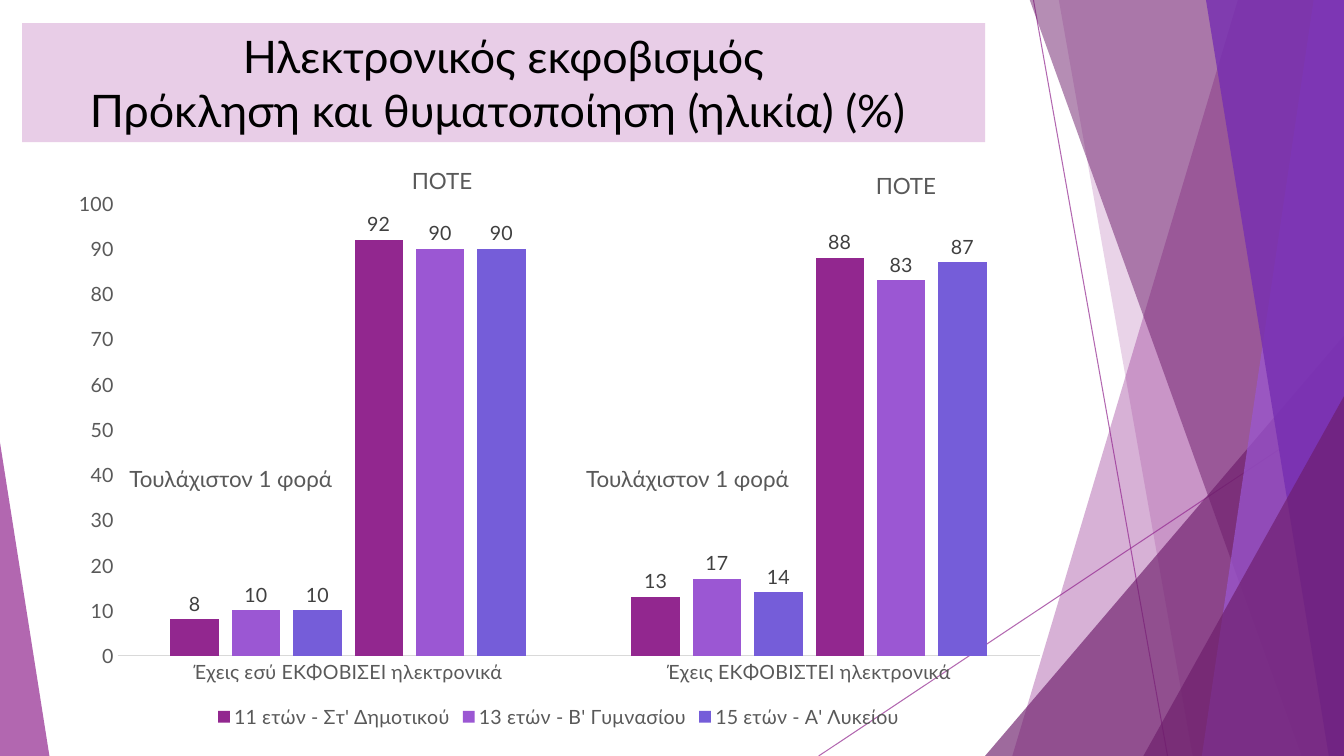
from lxml import etree
from pptx import Presentation
from pptx import util as u
from pptx.chart.data import CategoryChartData
from pptx.dml.color import RGBColor
from pptx.enum import chart as ch, shapes, text
from pptx.oxml import parse_xml
from pptx.oxml.ns import nsdecls, qn

PX = 9144  # 100 px to the inch
WIDE, HIGH = 1333, 750
FONT = "Lato"
PLUM = RGBColor(0x92, 0x27, 0x8F)
DARK = RGBColor(0x6D, 0x1D, 0x6B)
LILAC = RGBColor(0x9B, 0x57, 0xD3)
GRAPE = RGBColor(0x76, 0x2E, 0xB1)
BLUE = RGBColor(0x75, 0x5D, 0xD9)
PINK = RGBColor(0xE8, 0xCD, 0xE7)
BLACK = RGBColor(0, 0, 0)
GREY = RGBColor(0x59, 0x59, 0x59)
INK = RGBColor(0x40, 0x40, 0x40)
RULE = RGBColor(0xD9, 0xD9, 0xD9)


def px(*nums):
    return [u.Emu(n * PX) for n in nums]


def fade(item, pct):
    """Set the opacity of the first colour in a shape's properties."""
    tone = next(item._element.spPr.iter(qn("a:srgbClr")))
    etree.SubElement(tone, qn("a:alpha")).set("val", str(pct * 1000))


def paint(shape, color, pct=100):
    shape.shadow.inherit = False
    shape.fill.solid()
    shape.fill.fore_color.rgb = color
    shape.line.fill.background()
    if pct < 100:
        fade(shape, pct)


def ray(slide, x1, y1, x2, y2):
    line = slide.shapes.add_connector(
        shapes.MSO_CONNECTOR.STRAIGHT, *px(x1, y1, x2, y2))
    line.line.color.rgb = PLUM
    line.line.width = u.Pt(0.75)
    fade(line, 70)
    etree.SubElement(line._element.spPr, qn("a:effectLst"))


def band(slide, top, base, color, pct):
    """Draw a strip from a slanted left edge to the slide's right edge."""
    form = slide.shapes.build_freeform(top, -1, scale=PX)
    form.add_line_segments([(WIDE, -1), (WIDE, HIGH), (base, HIGH)], close=True)
    paint(form.convert_to_shape(), color, pct)


def wedge(slide, x, y, w, peak, color, pct):
    """Draw a right triangle that stands on the slide's lower edge."""
    shape = slide.shapes.add_shape(
        shapes.MSO_SHAPE.ISOSCELES_TRIANGLE, *px(x, y, w, HIGH - y))
    shape.adjustments[0] = peak
    paint(shape, color, pct)


def write(shape, lines, size, color):
    frame = shape.text_frame
    frame.word_wrap = True
    for i, line in enumerate(lines):
        para = frame.add_paragraph() if i else frame.paragraphs[0]
        para.alignment = text.PP_ALIGN.CENTER
        run = para.add_run()
        run.text = line
        style(run.font, size, color)


def style(font, size, color):
    font.name = FONT
    font.size = u.Pt(size)
    font.color.rgb = color


def title(slide, lines):
    shape = slide.shapes.add_shape(
        shapes.MSO_SHAPE.RECTANGLE, *px(22, 23, 955, 118))
    paint(shape, PINK)
    shape.text_frame.vertical_anchor = text.MSO_ANCHOR.MIDDLE
    write(shape, lines, 32, BLACK)


def note(slide, x, y, w, line):
    write(slide.shapes.add_textbox(*px(x, y, w, 37)), [line], 16, GREY)


def axes(chart):
    for axis in (chart.category_axis, chart.value_axis):
        axis.has_major_gridlines = False
        axis.major_tick_mark = axis.minor_tick_mark = ch.XL_TICK_MARK.NONE
        style(axis.tick_labels.font, 14, GREY)
    chart.category_axis.format.line.color.rgb = RULE
    chart.category_axis.format.line.width = u.Pt(0.75)
    scale = chart.value_axis
    scale.format.line.fill.background()
    scale.minimum_scale, scale.maximum_scale, scale.major_unit = 0, 100, 10


def legend(chart, hidden):
    chart.has_legend = True
    key = chart.legend
    key.position = ch.XL_LEGEND_POSITION.BOTTOM
    key.include_in_layout = False
    style(key.font, 14, GREY)
    for spot, idx in enumerate(hidden, 1):
        key._element.insert(spot, parse_xml(
            f'<c:legendEntry {nsdecls("c")}><c:idx val="{idx}"/>'
            '<c:delete val="1"/></c:legendEntry>'))


def place(chart, **parts):
    """Fix the inner plot area as fractions of the chart."""
    area = chart._chartSpace.chart.plotArea
    for old in area.findall(qn("c:layout")):
        area.remove(old)
    sizes = "".join(f'<c:{k} val="{v}"/>' for k, v in parts.items())
    area.insert(0, parse_xml(
        f'<c:layout {nsdecls("c")}><c:manualLayout>'
        '<c:layoutTarget val="inner"/><c:xMode val="edge"/>'
        f'<c:yMode val="edge"/>{sizes}</c:manualLayout></c:layout>'))


def bars(slide, cats, rows):
    data = CategoryChartData()
    data.categories = cats
    for name, vals in rows:
        data.add_series(name, vals)
    chart = slide.shapes.add_chart(
        ch.XL_CHART_TYPE.COLUMN_CLUSTERED, *px(57, 180, 994, 547), data).chart
    chart.has_title = False
    style(chart.font, 10, BLACK)
    plot = chart.plots[0]
    plot.vary_by_categories = False
    plot.gap_width, plot.overlap = 219, -27
    hues = (PLUM, LILAC, BLUE)
    for i, row in enumerate(plot.series):
        row.format.fill.solid()
        row.format.fill.fore_color.rgb = hues[i % 3]
        tags = row.data_labels
        tags.show_value = True
        tags.number_format = "#,##0"
        tags.number_format_is_linked = False
        tags.position = ch.XL_LABEL_POSITION.OUTSIDE_END
        style(tags.font, 14, INK)
    axes(chart)
    legend(chart, (3, 4, 5))
    place(chart, x=0.06, y=0.04, w=0.92, h=0.82)


def main():
    deck = Presentation()
    deck.slide_width, deck.slide_height = px(WIDE, HIGH)
    slide = deck.slides.add_slide(deck.slide_layouts[6])

    # Backdrop of rays and facets
    ray(slide, 1025, 0, 1158, 750)
    ray(slide, 1333, 403, 812, 750)
    band(slide, 1228, 1004, PLUM, 36)
    band(slide, 1050, 1183, PLUM, 20)
    wedge(slide, 977, 333, 356, 1, DARK, 66)
    band(slide, 1021, 1291, DARK, 50)
    band(slide, 1303, 1192, LILAC, 70)
    band(slide, 1196, 1318, GRAPE, 80)
    wedge(slide, 1134, 393, 199, 1, DARK, 66)
    wedge(slide, 0, 439, 49, 0, PLUM, 70)

    # Title
    title(slide, ["Ηλεκτρονικός εκφοβισμός",
                  "Πρόκληση και θυματοποίηση (ηλικία) (%) "])

    # Chart: at least once, then never, for each age
    bars(slide,
         ["Έχεις εσύ ΕΚΦΟΒΙΣΕΙ ηλεκτρονικά", "Έχεις ΕΚΦΟΒΙΣΤΕΙ ηλεκτρονικά"],
         [("11 ετών - Στ' Δημοτικού", (8, 13)),
          ("13 ετών - Β' Γυμνασίου", (10, 17)),
          ("15 ετών - Α' Λυκείου", (10, 14)),
          ("Series 4", (92, 88)),
          ("Series 5", (90, 83)),
          ("Series 6", (90, 87))])

    # Notes over the bar groups
    note(slide, 346, 161, 185, "ΠΟΤΕ")
    note(slide, 806, 166, 185, "ΠΟΤΕ")
    note(slide, 111, 457, 236, "Τουλάχιστον 1 φορά")
    note(slide, 559, 457, 246, "Τουλάχιστον 1 φορά")

    deck.save("out.pptx")


if __name__ == "__main__":
    main()
